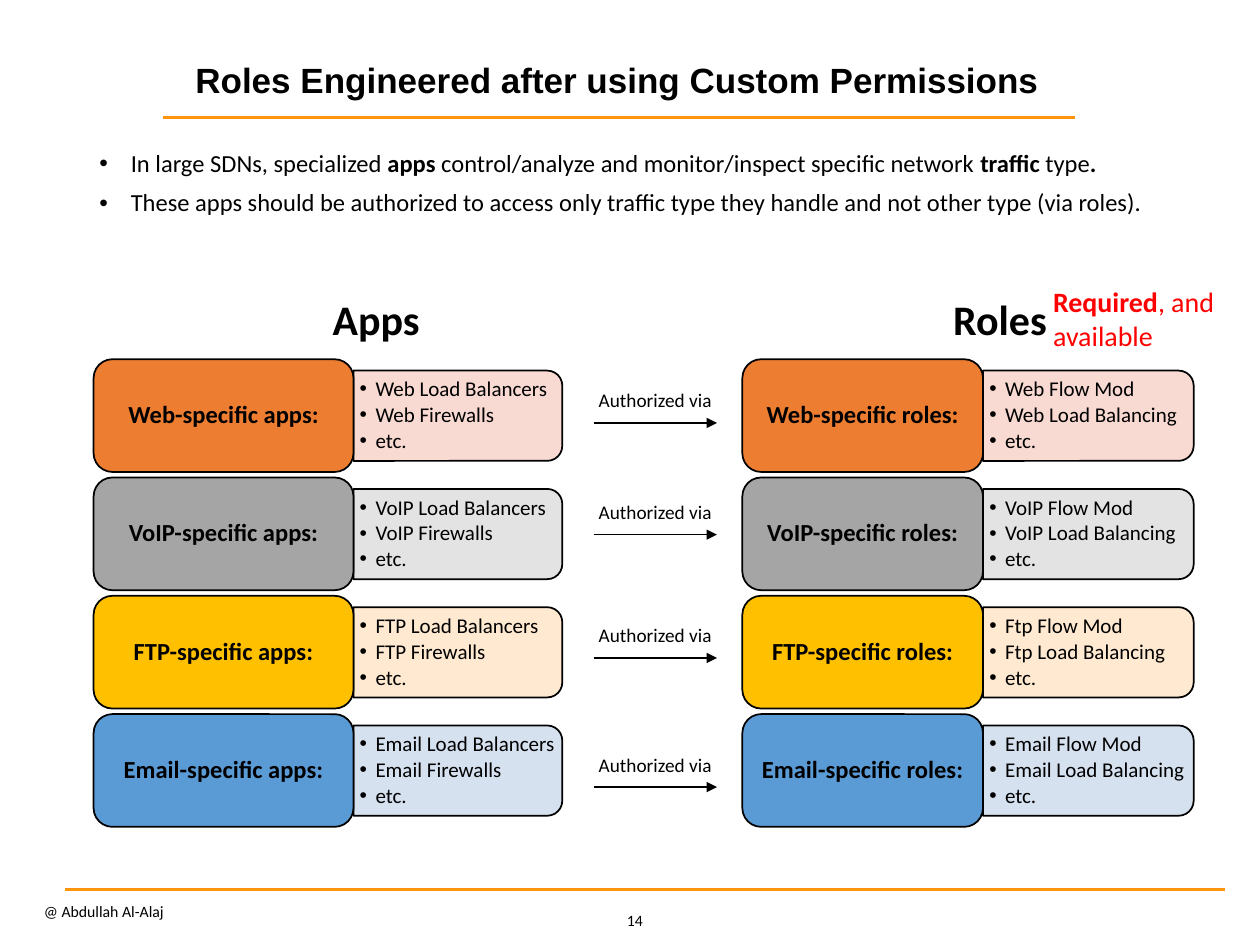
import pptx
import pptx.util
import pptx.dml.color
import pptx.enum.shapes
import pptx.enum.text
import pptx.oxml
import pptx.oxml.ns
from lxml import etree

Pt = pptx.util.Pt
Kind = pptx.enum.shapes.MSO_SHAPE
Align = pptx.enum.text.PP_ALIGN
Anchor = pptx.enum.text.MSO_ANCHOR
qn = pptx.oxml.ns.qn

COLORS = {
    "ink": "000000", "rule": "FF950E", "alert": "FF0000",
    "web": "ED7D31", "web pale": "F8D7CE",
    "voip": "A5A5A5", "voip pale": "E1E1E1",
    "ftp": "FFC000", "ftp pale": "FFE8CC",
    "email": "5B9BD5", "email pale": "D2DEEF",
}


class Board:
    """Hold the slide and its shared style, and draw each kind of element."""

    def __init__(self, slide, face="Calibri"):
        self.slide = slide
        self.face = face

    def color(self, name):
        return pptx.dml.color.RGBColor.from_string(COLORS[name])

    def label(self, shape, paras, size, bold=None, color="ink", face=None,
              align=Align.LEFT, anchor=Anchor.TOP, inset=(7.2, 3.6, 7.2, 3.6),
              line=1, before=0, after=0, indent=0):
        frame = shape.text_frame
        frame.word_wrap = True
        frame.vertical_anchor = anchor
        (frame.margin_left, frame.margin_top,
         frame.margin_right, frame.margin_bottom) = map(Pt, inset)
        for i, runs in enumerate(paras):
            para = frame.add_paragraph() if i else frame.paragraphs[0]
            if indent:
                self.bullet(para, indent)
            para.alignment = align
            para.line_spacing = line
            para.space_after = Pt(after)
            if i:
                para.space_before = Pt(before)
            font = para.font
            font.name = face or self.face
            font.size = Pt(size)
            font.bold = bold
            font.color.rgb = self.color(color)
            for part in [runs] if isinstance(runs, str) else runs:
                run = para.add_run()
                run.text = part if isinstance(part, str) else part[0]
                if not isinstance(part, str):
                    run.font.bold = True

    def bullet(self, para, indent):
        props = para._p.get_or_add_pPr()
        props.set("marL", str(Pt(indent)))
        props.set("indent", str(-Pt(indent)))
        etree.SubElement(props, qn("a:buFont")).set("typeface", "Arial")
        etree.SubElement(props, qn("a:buChar")).set("char", "•")

    def text(self, box, paras, size, **style):
        self.label(self.slide.shapes.add_textbox(*map(Pt, box)), paras, size, **style)

    def line(self, left, right, y, color="ink", width=1, arrow=False):
        line = self.slide.shapes.add_connector(
            pptx.enum.shapes.MSO_CONNECTOR.STRAIGHT, Pt(left), Pt(y), Pt(right), Pt(y))
        line.line.color.rgb = self.color(color)
        line.line.width = Pt(width)
        if arrow:
            outline = line._element.spPr.find(qn("a:ln"))
            etree.SubElement(outline, qn("a:tailEnd")).set("type", "triangle")
        etree.SubElement(line._element.spPr, qn("a:effectLst"))

    def shape(self, kind, box, fill):
        shape = self.slide.shapes.add_shape(kind, *map(Pt, box))
        shape.shadow.inherit = False
        shape.fill.solid()
        shape.fill.fore_color.rgb = self.color(fill)
        shape.line.color.rgb = self.color("ink")
        shape.line.width = Pt(1)
        return shape

    def panel(self, left, top, width, height, fill, items):
        shift = (width - height) / 2
        shape = self.shape(Kind.ROUND_2_SAME_RECTANGLE,
                           (left + shift, top - shift, height, width), fill)
        shape.rotation = 90
        tint = shape._element.spPr.find(qn("a:solidFill"))[0]
        etree.SubElement(tint, qn("a:alpha")).set("val", "90000")
        self.text((left, top + 2.6, width - 2.9, height - 5.2), items, 12,
                  anchor=Anchor.MIDDLE, inset=(3.6, 0, 0, 0), line=0.9, after=1.8, indent=9)

    def card(self, left, top, width, wide, tone, title, items):
        self.panel(left + width, top + 6.5, wide, 51.6, tone + " pale", items)
        block = self.shape(Kind.ROUNDED_RECTANGLE, (left, top, width, 64.4), tone)
        self.label(block, [title], 14, bold=True, align=Align.CENTER,
                   anchor=Anchor.MIDDLE, inset=(0, 0, 0, 0), line=0.9)


def main():
    deck = pptx.Presentation()
    deck.slide_width, deck.slide_height = Pt(720), Pt(540)
    board = Board(deck.slides.add_slide(deck.slide_layouts[6]))

    board.line(92.9, 614.2, 67, "rule", 1.5)
    board.line(37.4, 699.8, 508.3, "rule", 1.5)
    board.text((95, 24.5, 515.5, 36.7), ["Roles Engineered after using Custom Permissions"], 20,
               bold=True, face="Arial", align=Align.CENTER, anchor=Anchor.BOTTOM, line=0.9)
    board.text((49.7, 82.8, 640, 58.3), [
        ["In large SDNs, specialized ", ("apps",),
         " control/analyze and monitor/inspect specific network ", ("traffic ",), "type", (".",)],
        "These apps should be authorized to access only traffic type they handle "
        "and not other type (via roles).",
    ], 14, line=0.9, before=7.5, indent=18)
    board.text((345.6, 511.2, 28.8, 28.8), ["14"], 9, align=Align.RIGHT, anchor=Anchor.MIDDLE)
    board.text((18, 507.6, 198, 26), ["@ Abdullah Al-Alaj"], 9, anchor=Anchor.MIDDLE)

    for row, name in enumerate(["Web", "VoIP", "FTP", "Email"]):
        top = 205.3 + row * 67.6
        tone = name.lower()
        short = "Ftp" if name == "FTP" else name
        board.card(53.5, top, 148.5, 119.3, tone, f"{name}-specific apps:",
                   [f"{name} Load Balancers", f"{name} Firewalls", "etc."])
        board.card(424.2, top, 137.5, 120.4, tone, f"{name}-specific roles:",
                   [f"{short} Flow Mod", f"{short} Load Balancing", "etc."])

    for y in (241.7, 305.5, 376, 449.8):
        board.line(339.3, 409.7, y, arrow=True)
        board.text((331.9, y - 22, 85, 18), ["Authorized via"], 11,
                   align=Align.CENTER, anchor=Anchor.MIDDLE)

    board.text((183, 164.2, 95.8, 36), ["Apps"], 24, bold=True)
    board.text((537.6, 164.2, 72.7, 36), ["Roles"], 24, bold=True)
    board.text((594.7, 159.1, 108.7, 46), [[("Required",), ", and available"]], 16, color="alert")
    deck.save("out.pptx")


if __name__ == "__main__":
    main()
